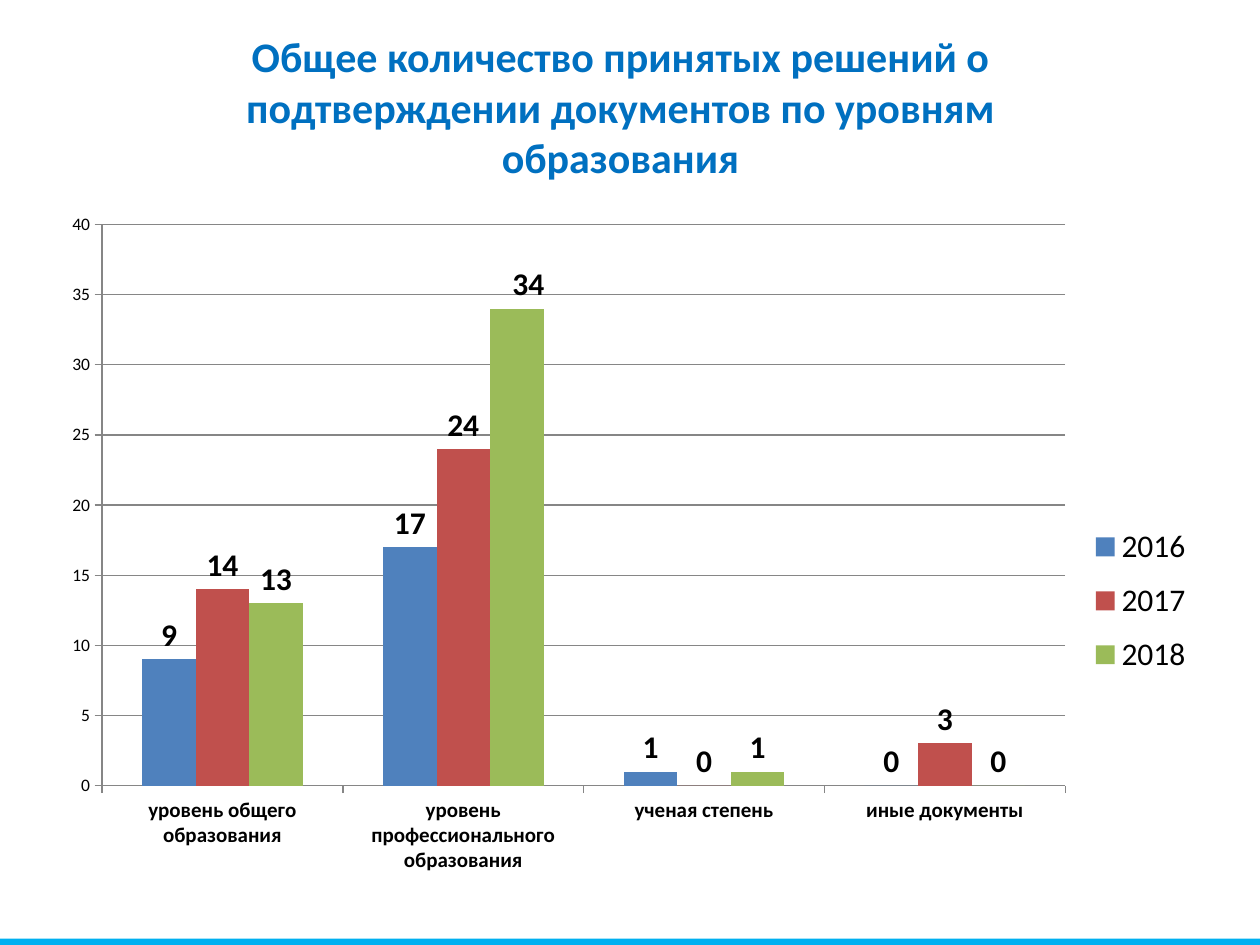
"""Build a slide with a clustered column chart of decisions by education level."""
from lxml.etree import SubElement
from pptx import Presentation
from pptx.chart.data import CategoryChartData
from pptx.dml.color import RGBColor
from pptx.enum.chart import XL_CHART_TYPE, XL_LABEL_POSITION, XL_LEGEND_POSITION, XL_TICK_MARK
from pptx.enum.shapes import MSO_SHAPE
from pptx.enum.text import MSO_ANCHOR, MSO_AUTO_SIZE, PP_ALIGN
from pptx.oxml.ns import qn
from pptx.util import Inches, Pt

TITLE = "Общее количество принятых решений о подтверждении документов по уровням образования"
CATEGORIES = [
    "уровень общего образования",
    "уровень профессионального образования",
    "ученая степень",
    "иные документы",
]
SERIES = [
    ("2016", (9, 17, 1, 0), "4F81BD"),
    ("2017", (14, 24, 0, 3), "C0504D"),
    ("2018", (13, 34, 1, 0), "9BBB59"),
]
THEME = {
    "font": "Calibri",
    "title": "0070C0",
    "text": "000000",
    "line": "868686",
    "strip": "00B0F0",
    "title_size": 24,
    "label_size": 18,
    "category_size": 12,
    "axis_size": 10,
}


def set_font(font, size, color=THEME["text"], bold=False):
    font.name = THEME["font"]
    font.size = Pt(size)
    font.bold = bold
    font.color.rgb = RGBColor.from_string(color)


def write(tf, text, align=PP_ALIGN.CENTER, **fmt):
    tf.word_wrap = True
    tf.auto_size = MSO_AUTO_SIZE.SHAPE_TO_FIT_TEXT
    tf.vertical_anchor = MSO_ANCHOR.MIDDLE
    p = tf.paragraphs[0]
    p.alignment = align
    r = p.add_run()
    r.text = text
    set_font(r.font, **fmt)


def set_layout(parent, index, **settings):
    for old in parent.findall(qn("c:layout")):
        parent.remove(old)
    layout = SubElement(parent, qn("c:layout"))
    manual = SubElement(layout, qn("c:manualLayout"))
    for name, value in settings.items():
        SubElement(manual, qn(f"c:{name}")).set("val", str(value))
    parent.insert(index, layout)


def style_axis(axis, size, bold=False):
    set_font(axis.tick_labels.font, size, bold=bold)
    axis.major_tick_mark = XL_TICK_MARK.OUTSIDE
    axis.minor_tick_mark = XL_TICK_MARK.NONE
    set_line(axis.format.line)


def set_line(line):
    line.color.rgb = RGBColor.from_string(THEME["line"])
    line.width = Pt(0.75)


def add_strip(slide):
    sp = slide.shapes.add_shape(MSO_SHAPE.RECTANGLE, 0, Inches(7.45), Inches(10), Inches(0.05))
    sp.shadow.inherit = False
    sp.fill.solid()
    sp.fill.fore_color.rgb = RGBColor.from_string(THEME["strip"])
    sp.line.fill.background()


def add_title(slide):
    sp = slide.shapes.title
    sp.left, sp.top, sp.width, sp.height = map(Inches, (1.38, 0.19, 7.09, 1.31))
    write(sp.text_frame, TITLE, size=THEME["title_size"], color=THEME["title"], bold=True)


def add_decisions_chart(slide):
    data = CategoryChartData()
    data.categories = CATEGORIES
    for name, values, _ in SERIES:
        data.add_series(name, values)
    box = map(Inches, (0.35, 1.62, 9.21, 5.43))
    chart = slide.shapes.add_chart(XL_CHART_TYPE.COLUMN_CLUSTERED, *box, data).chart
    chart.has_title = False
    set_font(chart.font, THEME["axis_size"])

    plot = chart.plots[0]
    plot.gap_width = 150
    plot.overlap = 0
    plot.vary_by_categories = False
    for series, (_, _, color) in zip(plot.series, SERIES):
        series.format.fill.solid()
        series.format.fill.fore_color.rgb = RGBColor.from_string(color)
        labels = series.data_labels
        labels.show_value = True
        labels.position = XL_LABEL_POSITION.OUTSIDE_END
        set_font(labels.font, THEME["label_size"], bold=True)

    peak = plot.series[2].points[1].data_label
    peak.position = XL_LABEL_POSITION.OUTSIDE_END
    set_font(peak.font, THEME["label_size"], bold=True)
    peak_xml = next(chart.element.iter(qn("c:dLbl")))
    set_layout(peak_xml, 1, x=0.01, y=0)

    style_axis(chart.category_axis, THEME["category_size"], bold=True)
    axis = chart.value_axis
    style_axis(axis, THEME["axis_size"])
    axis.minimum_scale, axis.maximum_scale, axis.major_unit = 0, 40, 5
    axis.has_major_gridlines = True
    set_line(axis.major_gridlines.format.line)

    chart.has_legend = True
    legend = chart.legend
    legend.position = XL_LEGEND_POSITION.RIGHT
    legend.include_in_layout = False
    set_font(legend.font, THEME["label_size"])
    edge = {"xMode": "edge", "yMode": "edge"}
    set_layout(next(chart.element.iter(qn("c:legend"))), 1, **edge, x=0.89, y=0.45, w=0.11, h=0.26)
    set_layout(next(chart.element.iter(qn("c:plotArea"))), 0,
               layoutTarget="inner", **edge, x=0.05, y=0.03, w=0.83, h=0.82)


def main():
    prs = Presentation()
    prs.slide_width, prs.slide_height = Inches(10), Inches(7.5)
    slide = prs.slides.add_slide(prs.slide_layouts[5])
    add_strip(slide)
    add_decisions_chart(slide)
    add_title(slide)
    prs.save("out.pptx")


if __name__ == "__main__":
    main()
